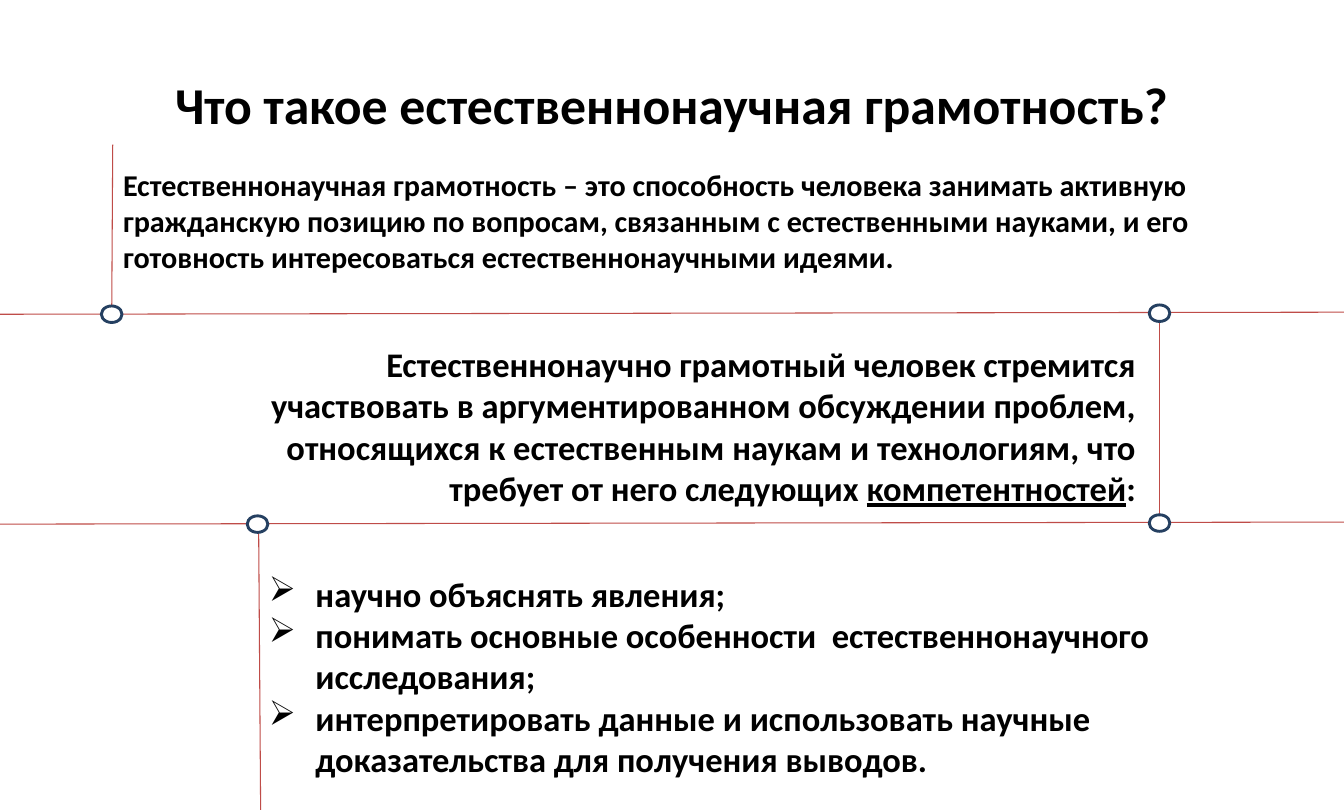
from lxml import etree
from pptx import Presentation
from pptx import util as u
from pptx.dml.color import RGBColor
from pptx.enum import shapes, text
from pptx.oxml import ns

BLACK = RGBColor(0, 0, 0)
WHITE = RGBColor(0xFF, 0xFF, 0xFF)
RED = RGBColor(0xBF, 0x4C, 0x48)
NAVY = RGBColor(0x25, 0x40, 0x61)
FONT = "Calibri"
PAGE_WIDTH, PAGE_HEIGHT = u.Emu(11880850), u.Emu(7164388)
WIDTH, HEIGHT = PAGE_WIDTH.inches, PAGE_HEIGHT.inches

# Content: each paragraph is a list of (words, underlined) spans
TITLE = [[("Что такое естественнонаучная грамотность?", False)]]
DEFINITION = [[(
    "Естественнонаучная грамотность – это способность человека занимать "
    "активную гражданскую позицию по вопросам, связанным с естественными "
    "науками, и его готовность интересоваться естественнонаучными идеями.", False)]]
PERSON = [[
    ("Естественнонаучно грамотный человек стремится участвовать в "
     "аргументированном обсуждении проблем, относящихся к естественным наукам "
     "и технологиям, что требует от него следующих ", False),
    ("компетентностей", True),
    (":", False),
]]
COMPETENCES = [
    [("научно объяснять явления;", False)],
    [("понимать основные особенности  естественнонаучного исследования;", False)],
    [("интерпретировать данные и использовать научные доказательства "
      "для получения выводов.", False)],
]

LEFT, CENTER, RIGHT = text.PP_ALIGN.LEFT, text.PP_ALIGN.CENTER, text.PP_ALIGN.RIGHT
TOP, MIDDLE = text.MSO_ANCHOR.TOP, text.MSO_ANCHOR.MIDDLE

# Paragraphs, (left, top, width, height), size, alignment, anchor, bulleted
TEXTS = [
    (TITLE, (0.65, 0.53, 11.69, 0.94), 36, CENTER, MIDDLE, False),
    (DEFINITION, (1.07, 1.55, 11.66, 1.18), 21, LEFT, TOP, False),
    (PERSON, (1.89, 3.26, 9.21, 1.74), 24, RIGHT, TOP, False),
    (COMPETENCES, (2.48, 5.48, 8.85, 2.22), 24, LEFT, TOP, True),
]

# Rules that frame the texts, and the rings where they meet
RULES = [
    (0, 5.07, WIDTH, 5.05),
    (11.21, 3.11, 11.21, 5.07),
    (2.5, 5.05, 2.52, HEIGHT),
    (0, 3.04, WIDTH, 3.02),
    (1.09, 1.4, 1.08, 3.05),
]
RING_CENTERS = [(11.21, 5.06), (2.49, 5.07), (11.21, 3.03), (1.08, 3.04)]
RING_WIDTH, RING_HEIGHT = 0.2, 0.16
# In this symbol font the letter is drawn as an arrowhead
BULLET_FONT, BULLET, INDENT = "Wingdings", "Ø", 0.45


def add_bullet(para):
    props = para._p.get_or_add_pPr()
    props.set("marL", str(u.Inches(INDENT)))
    props.set("indent", str(-u.Inches(INDENT)))
    font = etree.SubElement(props, ns.qn("a:buFont"))
    font.set("typeface", BULLET_FONT)
    font.set("charset", "2")
    etree.SubElement(props, ns.qn("a:buChar")).set("char", BULLET)


def add_text(page, paragraphs, place, size, align, anchor, bulleted):
    box = page.shapes.add_textbox(*map(u.Inches, place))
    frame = box.text_frame
    frame.word_wrap = True
    frame.vertical_anchor = anchor
    frame.margin_left = frame.margin_right = u.Inches(0.12)
    frame.margin_top = frame.margin_bottom = u.Inches(0.06)
    for index, spans in enumerate(paragraphs):
        para = frame.add_paragraph() if index else frame.paragraphs[0]
        para.alignment = align
        if bulleted:
            add_bullet(para)
        for words, underlined in spans:
            span = para.add_run()
            span.text = words
            span.font.name = FONT
            span.font.size = u.Pt(size)
            span.font.bold = True
            span.font.underline = underlined
            span.font.color.rgb = BLACK


def add_rule(page, ends):
    rule = page.shapes.add_connector(shapes.MSO_CONNECTOR.STRAIGHT, *map(u.Inches, ends))
    rule.line.color.rgb = RED
    rule.line.width = u.Pt(0.75)
    etree.SubElement(rule._element.spPr, ns.qn("a:effectLst"))


def add_ring(page, x, y):
    ring = page.shapes.add_shape(
        shapes.MSO_SHAPE.OVAL,
        u.Inches(x - RING_WIDTH / 2), u.Inches(y - RING_HEIGHT / 2),
        u.Inches(RING_WIDTH), u.Inches(RING_HEIGHT))
    ring.shadow.inherit = False
    ring.fill.solid()
    ring.fill.fore_color.rgb = WHITE
    ring.line.color.rgb = NAVY
    ring.line.width = u.Pt(2)


def main():
    deck = Presentation()
    deck.slide_width, deck.slide_height = PAGE_WIDTH, PAGE_HEIGHT
    page = deck.slides.add_slide(deck.slide_layouts[6])
    for item in TEXTS:
        add_text(page, *item)
    for ends in RULES:
        add_rule(page, ends)
    for center in RING_CENTERS:
        add_ring(page, *center)
    deck.save("out.pptx")


if __name__ == "__main__":
    main()
